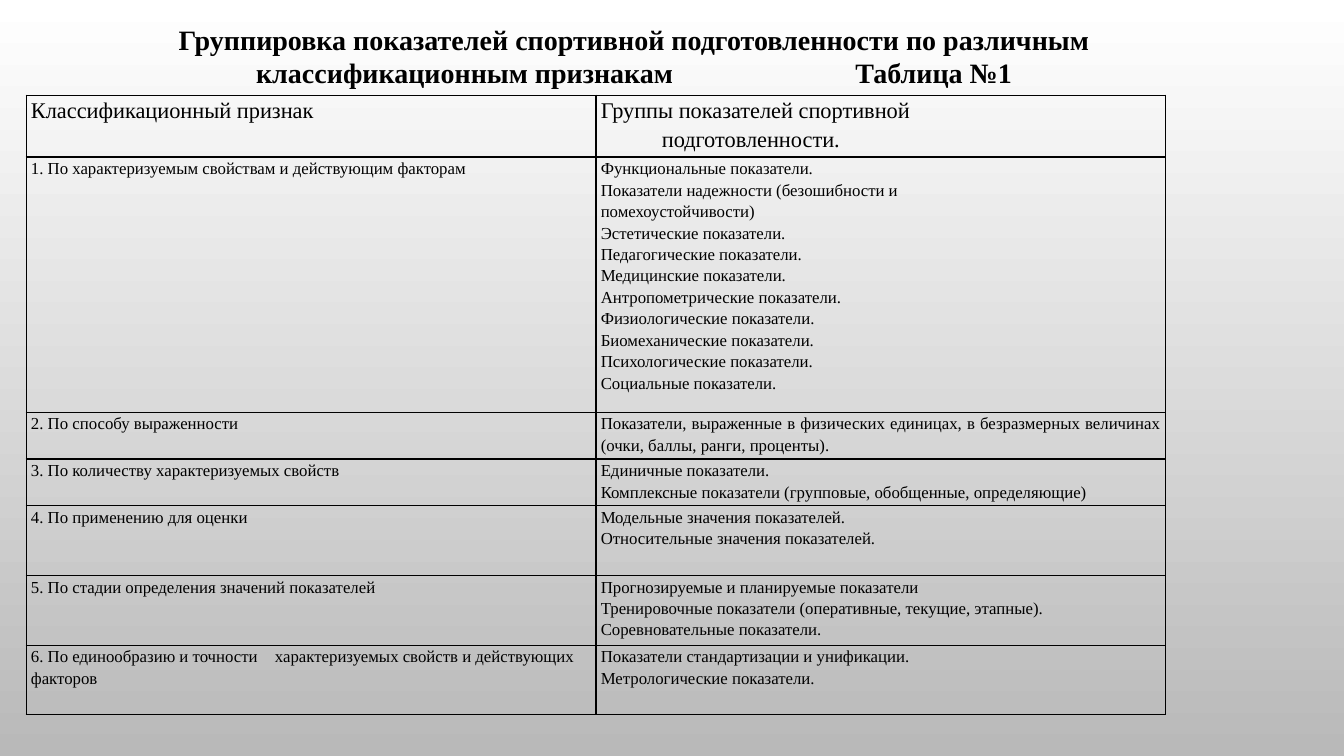
from dataclasses import dataclass

import lxml.etree
import pptx
import pptx.dml.color
import pptx.enum.text
import pptx.oxml.ns
import pptx.util
from pptx.util import Cm


@dataclass(frozen=True)
class Theme:
    font: str = "Times New Roman"
    ink: str = "000000"
    background_top: str = "FFFFFF"
    background_bottom: str = "B9B9B9"
    title_size: int = 20
    header_size: int = 16
    body_size: int = 12
    border_width: int = 1


@dataclass(frozen=True)
class Line:
    text: str
    indent: float = 0
    tabs: tuple[float, ...] = ()


@dataclass(frozen=True)
class Row:
    height: float
    feature: tuple[Line, ...]
    indicators: tuple[Line, ...]


THEME = Theme()
ALIGN = pptx.enum.text.PP_ALIGN

TITLE = (
    Line("Группировка показателей спортивной подготовленности по различным"),
    Line("\tклассификационным признакам\tТаблица №1", tabs=(2.92, 18.02)),
)

ROWS = (
    Row(1.54, (Line("Классификационный признак"),), (
        Line("Группы показателей спортивной"),
        Line("подготовленности.", indent=1.54),
    )),
    Row(6.43, (Line("1. По характеризуемым свойствам и действующим факторам"),), (
        Line("Функциональные показатели."),
        Line("Показатели надежности (безошибности и"),
        Line("помехоустойчивости)"),
        Line("Эстетические показатели."),
        Line("Педагогические показатели."),
        Line("Медицинские показатели."),
        Line("Антропометрические показатели."),
        Line("Физиологические показатели."),
        Line("Биомеханические показатели."),
        Line("Психологические показатели."),
        Line("Социальные показатели."),
    )),
    Row(1.18, (Line("2. По способу выраженности"),), (
        Line("Показатели, выраженные в физических единицах, в безразмерных "
             "величинах (очки, баллы, ранги, проценты)."),
    )),
    Row(1.17, (Line("3. По количеству характеризуемых свойств"),), (
        Line("Единичные показатели."),
        Line("Комплексные показатели (групповые, обобщенные, определяющие)"),
    )),
    Row(1.76, (Line("4. По применению для оценки"),), (
        Line("Модельные значения показателей."),
        Line("Относительные значения показателей."),
    )),
    Row(1.76, (Line("5. По стадии определения значений показателей"),), (
        Line("Прогнозируемые и планируемые показатели"),
        Line("Тренировочные показатели (оперативные, текущие, этапные)."),
        Line("Соревновательные показатели."),
    )),
    Row(1.75, (
        Line("6. По единообразию и точности\tхарактеризуемых свойств и действующих",
             tabs=(6.15,)),
        Line("факторов"),
    ), (
        Line("Показатели стандартизации и унификации."),
        Line("Метрологические показатели."),
    )),
)


def color(value: str) -> pptx.dml.color.RGBColor:
    return pptx.dml.color.RGBColor.from_string(value)


def add_element(parent: lxml.etree._Element, name: str, **attributes: str) -> lxml.etree._Element:
    return lxml.etree.SubElement(parent, pptx.oxml.ns.qn(name), attributes)


def write_lines(text_frame: pptx.text.text.TextFrame, lines: tuple[Line, ...],
                size: int, bold: bool, alignment: ALIGN, spacing: float) -> None:
    text_frame.text = "\n".join(line.text for line in lines)
    for paragraph, line in zip(text_frame.paragraphs, lines):
        properties = paragraph._p.get_or_add_pPr()
        if line.indent:
            properties.set("marL", str(int(Cm(line.indent))))
            properties.set("indent", "0")
        if line.tabs:
            tab_list = add_element(properties, "a:tabLst")
            for position in line.tabs:
                add_element(tab_list, "a:tab", pos=str(int(Cm(position))), algn="l")
        paragraph.alignment = alignment
        paragraph.line_spacing = spacing
        for run in paragraph.runs:
            run.font.name = THEME.font
            run.font.size = pptx.util.Pt(size)
            run.font.bold = bold
            run.font.color.rgb = color(THEME.ink)


def format_cell(cell: pptx.table._Cell) -> None:
    cell.margin_left = cell.margin_right = Cm(0.12)
    cell.margin_top = cell.margin_bottom = 0
    properties = cell._tc.get_or_add_tcPr()
    for side in ("a:lnL", "a:lnR", "a:lnT", "a:lnB"):
        border = add_element(properties, side, w=str(int(pptx.util.Pt(THEME.border_width))))
        add_element(add_element(border, "a:solidFill"), "a:srgbClr", val=THEME.ink)
    cell.fill.background()


def paint_background(slide: pptx.slide.Slide) -> None:
    fill = slide.background.fill
    fill.gradient()
    fill.gradient_angle = 270
    stops = (THEME.background_top, THEME.background_bottom)
    for position, (stop, value) in enumerate(zip(fill.gradient_stops, stops)):
        stop.position = position
        stop.color.rgb = color(value)


def add_title(slide: pptx.slide.Slide) -> None:
    title = slide.shapes.title
    title.left, title.top, title.width, title.height = Cm(3.28), Cm(0.43), Cm(25.4), Cm(1.96)
    text_frame = title.text_frame
    write_lines(text_frame, TITLE, THEME.title_size, True, ALIGN.CENTER, 1.0)
    text_frame.paragraphs[1].alignment = ALIGN.LEFT
    text_frame.word_wrap = True
    text_frame.vertical_anchor = pptx.enum.text.MSO_ANCHOR.MIDDLE
    text_frame.auto_size = pptx.enum.text.MSO_AUTO_SIZE.SHAPE_TO_FIT_TEXT


def add_indicator_table(slide: pptx.slide.Slide) -> None:
    height = sum(row.height for row in ROWS)
    table = slide.shapes.add_table(
        len(ROWS), 2, Cm(0.66), Cm(2.4), Cm(28.72), Cm(height)).table
    table.horz_banding = False
    table.first_row = False
    for index, row in enumerate(ROWS):
        table.rows[index].height = Cm(row.height)
        size = THEME.body_size if index else THEME.header_size
        for column, lines in enumerate((row.feature, row.indicators)):
            cell = table.cell(index, column)
            format_cell(cell)
            write_lines(cell.text_frame, lines, size, False, ALIGN.JUSTIFY, 1.15)


def main() -> None:
    presentation = pptx.Presentation()
    presentation.slide_width, presentation.slide_height = Cm(33.87), Cm(19.05)
    slide = presentation.slides.add_slide(presentation.slide_layouts[5])
    paint_background(slide)
    add_title(slide)
    add_indicator_table(slide)
    presentation.save("out.pptx")


if __name__ == "__main__":
    main()
